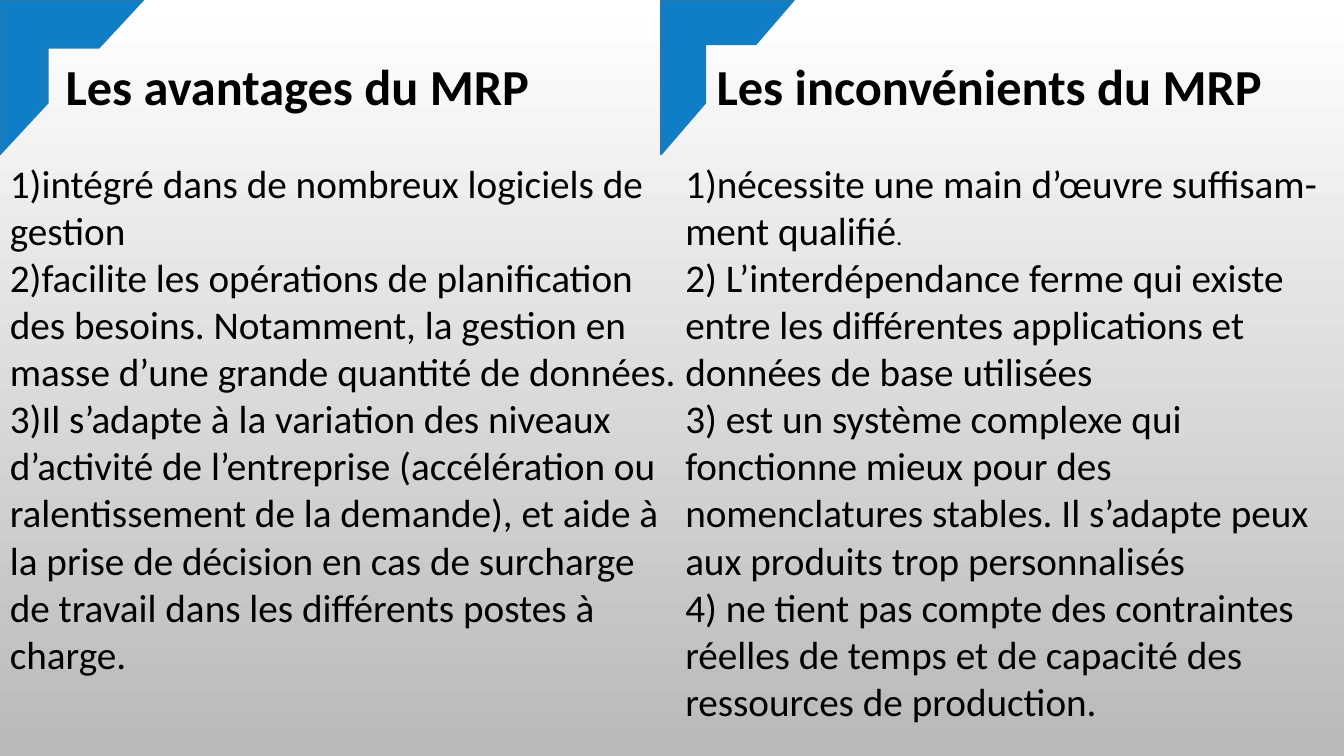
import pptx
import pptx.util
import pptx.dml.color
import pptx.enum.shapes
import pptx.enum.text

Cm = pptx.util.Cm
Pt = pptx.util.Pt
RGB = pptx.dml.color.RGBColor

BLACK = RGB(0x00, 0x00, 0x00)
WHITE = RGB(0xFF, 0xFF, 0xFF)
GREY = RGB(0xB9, 0xB9, 0xB9)
BLUE = RGB(0x10, 0x7E, 0xC6)
EDGE = RGB(0x23, 0x79, 0xB0)

# Each paragraph is a list of (text, size) runs
PROS = [
    [("1)intégré dans de nombreux logiciels de gestion", 28)],
    [("2)facilite les opérations de planification des besoins. Notamment, "
      "la gestion en masse d’une grande quantité de données. 3)Il s’adapte "
      "à la variation des niveaux d’activité de l’entreprise (accélération "
      "ou ralentissement de la demande), et aide à la prise de décision en "
      "cas de surcharge de travail dans les différents postes à charge.", 28)],
]
CONS = [
    [("1)nécessite une main d’œuvre suffisam-ment qualifié", 28), (".", 18)],
    [("2) L’interdépendance ferme qui existe entre les différentes "
      "applications et données de base utilisées", 28)],
    [("3) est un système complexe qui fonctionne mieux pour des nomenclatures "
      "stables. Il s’adapte peux aux produits trop personnalisés", 28)],
    [("4) ne tient pas compte des contraintes réelles de temps et de capacité "
      "des ressources de production.", 28)],
]

# Left edge and width in cm of the corner, heading and body of each column
COLUMNS = [
    dict(head="Les avantages du MRP", body=PROS, corner=(0, 3.61),
         top=(1.4, 13.03), main=(0, 17.4), tall=13.41),
    dict(head="Les inconvénients du MRP", body=CONS, corner=(16.66, 3.35),
         top=(17.81, 16.05), main=(17.02, 16.84), tall=14.63),
]
HEAD_Y, HEAD_H = 1.27, 1.8
BODY_Y = 3.89

deck = pptx.Presentation()
deck.slide_width = Cm(33.87)
deck.slide_height = Cm(19.05)
slide = deck.slides.add_slide(deck.slide_layouts[5])

back = slide.background.fill
back.gradient()
back.gradient_angle = 270
for stop, color in zip(back.gradient_stops, (WHITE, GREY)):
    stop.color.rgb = color


def write(paras, x, y, w, h, box=None, bold=False):
    """Fill the given box, or a new text box, with paragraphs of runs."""
    if box is None:
        box = slide.shapes.add_textbox(0, 0, 0, 0)
    box.left, box.top, box.width, box.height = Cm(x), Cm(y), Cm(w), Cm(h)
    frame = box.text_frame
    frame.word_wrap = True
    frame.auto_size = pptx.enum.text.MSO_AUTO_SIZE.NONE
    frame.vertical_anchor = pptx.enum.text.MSO_ANCHOR.TOP
    for i, runs in enumerate(paras):
        para = frame.add_paragraph() if i else frame.paragraphs[0]
        para.alignment = pptx.enum.text.PP_ALIGN.LEFT
        for text, size in runs:
            run = para.add_run()
            run.text = text
            run.font.name = "Calibri"
            run.font.size = Pt(size)
            run.font.bold = bold
            run.font.color.rgb = BLACK


def frame_corner(x, w):
    shape = slide.shapes.add_shape(
        pptx.enum.shapes.MSO_SHAPE.HALF_FRAME, Cm(x), 0, Cm(w), Cm(BODY_Y))
    shape.shadow.inherit = False
    shape.fill.solid()
    shape.fill.fore_color.rgb = BLUE
    shape.line.color.rgb = EDGE
    shape.line.width = Pt(1.25)


title = slide.shapes.title
for col in COLUMNS:
    frame_corner(*col["corner"])
    x, w = col["top"]
    write([[(col["head"], 36)]], x, HEAD_Y, w, HEAD_H, box=title, bold=True)
    title = None  # only the first heading uses the placeholder
    x, w = col["main"]
    write(col["body"], x, BODY_Y, w, col["tall"])

deck.save("out.pptx")
